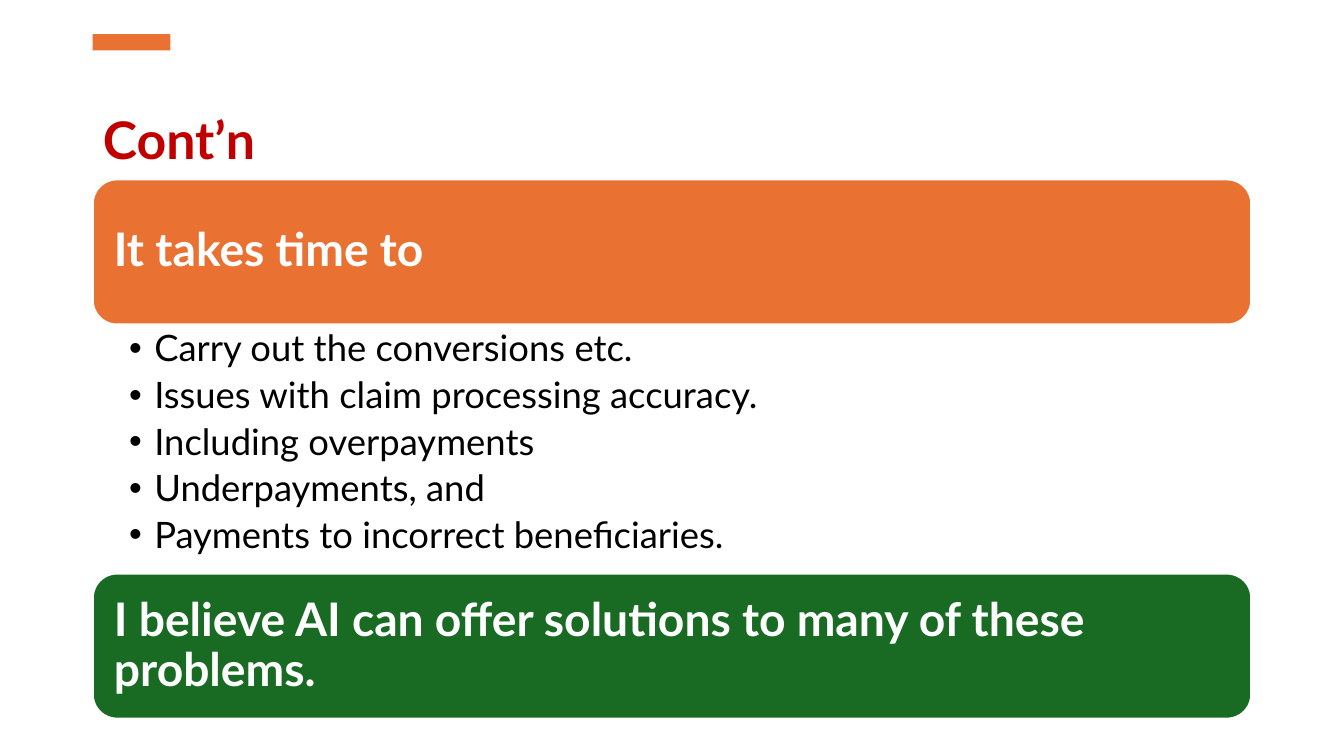
from dataclasses import dataclass

from lxml import etree
from pptx import Presentation
from pptx.dml.color import RGBColor
from pptx.enum.shapes import MSO_SHAPE
from pptx.enum.text import MSO_ANCHOR, MSO_AUTO_SIZE, PP_ALIGN
from pptx.oxml.ns import qn
from pptx.shapes.base import BaseShape
from pptx.slide import Slide
from pptx.text.text import TextFrame, _Paragraph
from pptx.util import Inches, Pt

RECT = MSO_SHAPE.RECTANGLE
ROUND = MSO_SHAPE.ROUNDED_RECTANGLE
TOP = MSO_ANCHOR.TOP
MIDDLE = MSO_ANCHOR.MIDDLE
BOTTOM = MSO_ANCHOR.BOTTOM
LEFT = PP_ALIGN.LEFT
FIXED = MSO_AUTO_SIZE.NONE

ORANGE = RGBColor(0xE9, 0x71, 0x32)
GREEN = RGBColor(0x19, 0x6B, 0x24)
RED = RGBColor(0xC0, 0x00, 0x00)
WHITE = RGBColor(0xFF, 0xFF, 0xFF)
BLACK = RGBColor(0x00, 0x00, 0x00)

FONT = "Lato"
EDGE = 0.92
WIDTH = 11.49


@dataclass(frozen=True)
class Banner:
    text: str
    top: float
    fill: RGBColor


@dataclass(frozen=True)
class Style:
    size: float
    color: RGBColor
    bold: bool = False


HEAD = Style(37, RED, True)
LABEL = Style(33, WHITE, True)
ITEM = Style(26, BLACK)

BANNERS = [
    Banner("It takes time to", 1.78, ORANGE),
    Banner("I believe AI can offer solutions to many of these problems.", 5.69, GREEN),
]
ITEMS = [
    "Carry out the conversions etc.",
    "Issues with claim processing accuracy.",
    "Including overpayments",
    "Underpayments, and",
    "Payments to incorrect beneficiaries.",
]


def place(shape: BaseShape, top: float, height: float) -> None:
    shape.left, shape.top = Inches(EDGE), Inches(top)
    shape.width, shape.height = Inches(WIDTH), Inches(height)


def set_frame(frame: TextFrame, anchor: MSO_ANCHOR, left: float, top: float, right: float) -> None:
    frame.word_wrap = True
    frame.auto_size = FIXED
    frame.vertical_anchor = anchor
    frame.margin_left, frame.margin_right = Inches(left), Inches(right)
    frame.margin_top = frame.margin_bottom = Inches(top)


def write(para: _Paragraph, text: str, style: Style) -> None:
    para.alignment = LEFT
    para.line_spacing = 0.9
    run = para.add_run()
    run.text = text
    run.font.name = FONT
    run.font.size = Pt(style.size)
    run.font.bold = style.bold
    run.font.color.rgb = style.color


def add_bullet(para: _Paragraph) -> None:
    props = para._p.get_or_add_pPr()
    props.set("marL", str(Inches(0.25)))
    props.set("indent", str(-Inches(0.25)))
    etree.SubElement(props, qn("a:buFont")).set("typeface", "Arial")
    etree.SubElement(props, qn("a:buChar")).set("char", "•")


def draw_title(slide: Slide) -> None:
    title = slide.shapes.title
    place(title, 0.75, 0.99)
    set_frame(title.text_frame, BOTTOM, 0.1, 0.05, 0.1)
    write(title.text_frame.paragraphs[0], "Cont’n", HEAD)


def draw_accent(slide: Slide) -> None:
    bar = slide.shapes.add_shape(RECT, Inches(EDGE), Inches(0.34), Inches(0.77), Inches(0.16))
    bar.shadow.inherit = False
    bar.fill.solid()
    bar.fill.fore_color.rgb = ORANGE
    bar.line.fill.background()


def draw_banner(slide: Slide, banner: Banner) -> None:
    box = slide.shapes.add_shape(ROUND, 0, 0, 0, 0)
    place(box, banner.top, 1.44)
    box.shadow.inherit = False
    box.fill.solid()
    box.fill.fore_color.rgb = banner.fill
    box.line.color.rgb = WHITE
    box.line.width = Pt(1.5)
    set_frame(box.text_frame, MIDDLE, 0.14, 0.14, 0.14)
    write(box.text_frame.paragraphs[0], banner.text, LABEL)


def draw_list(slide: Slide) -> None:
    box = slide.shapes.add_textbox(0, 0, 0, 0)
    place(box, 3.23, 2.47)
    frame = box.text_frame
    set_frame(frame, TOP, 0.36, 0.05, 0.26)
    for i, text in enumerate(ITEMS):
        para = frame.add_paragraph() if i else frame.paragraphs[0]
        add_bullet(para)
        para.level = 1
        para.space_after = Pt(5.2)
        write(para, text, ITEM)


def main() -> None:
    deck = Presentation()
    deck.slide_width, deck.slide_height = Inches(13.33), Inches(7.5)
    slide = deck.slides.add_slide(deck.slide_layouts[5])
    draw_title(slide)
    draw_accent(slide)
    for banner in BANNERS:
        draw_banner(slide, banner)
    draw_list(slide)
    deck.save("out.pptx")


if __name__ == "__main__":
    main()
